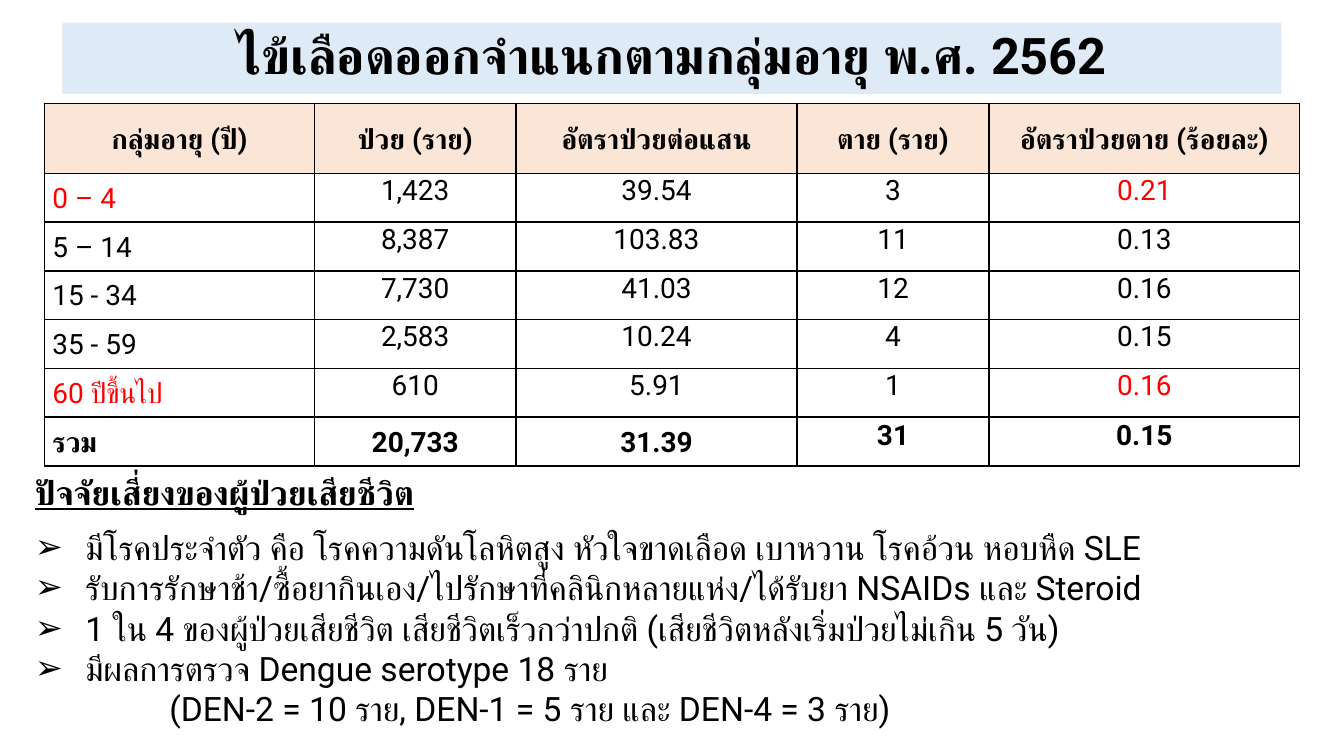
from dataclasses import dataclass

from lxml import etree
from pptx import Presentation
from pptx import util as u
from pptx.dml import color
from pptx.enum import shapes, text
from pptx.oxml import ns


@dataclass(frozen=True)
class Theme:
    font: str = "Roboto"
    ink: str = "000000"
    alert: str = "FF0000"
    title_fill: str = "DEEBF7"
    header_fill: str = "FBE5D6"
    title_size: float = 27
    table_size: float = 15
    body_size: float = 18


theme = Theme()
WIDTH = u.Inches(10)
HEIGHT = WIDTH * 9 // 16
CENTER, LEFT = text.PP_ALIGN.CENTER, text.PP_ALIGN.LEFT
TOP, MIDDLE = text.MSO_ANCHOR.TOP, text.MSO_ANCHOR.MIDDLE


def add_span(para, words, size, bold=False, ink=theme.ink):
    """Add one run, with the same typeface for Latin and Thai letters."""
    span = para.add_run()
    span.text = words
    span.font.name = theme.font
    span.font.size = u.Pt(size)
    span.font.bold = bold
    span.font.color.rgb = color.RGBColor.from_string(ink)
    thai = etree.SubElement(span.font._element, ns.qn("a:cs"))
    thai.set("typeface", theme.font)
    return span


def set_margins(holder, left, top, right, bottom):
    holder.margin_left, holder.margin_top = u.Inches(left), u.Inches(top)
    holder.margin_right, holder.margin_bottom = u.Inches(right), u.Inches(bottom)


deck = Presentation()
deck.slide_width, deck.slide_height = WIDTH, HEIGHT
page = deck.slides.add_slide(deck.slide_layouts[6])

# Title band, centred on the slide
band_width = int(WIDTH * 0.907)
band = page.shapes.add_shape(
    shapes.MSO_SHAPE.RECTANGLE,
    (WIDTH - band_width) // 2, int(HEIGHT * 0.03), band_width, u.Inches(0.53))
band.shadow.inherit = False
band.fill.solid()
band.fill.fore_color.rgb = color.RGBColor.from_string(theme.title_fill)
band.line.fill.background()
frame = band.text_frame
frame.word_wrap = True
frame.vertical_anchor = MIDDLE
set_margins(frame, 0.07, 0.04, 0.07, 0.04)
para = frame.paragraphs[0]
para.alignment = CENTER
para.line_spacing = 0.9
add_span(para, "ไข้เลือดออกจำแนกตามกลุ่มอายุ พ.ศ. 2562", theme.title_size, bold=True)

# Cases and deaths by age group
rows = [
    ["กลุ่มอายุ (ปี)", "ป่วย (ราย)", "อัตราป่วยต่อแสน", "ตาย (ราย)", "อัตราป่วยตาย (ร้อยละ)"],
    ["0 – 4", "1,423", "39.54", "3", "0.21"],
    ["5 – 14", "8,387", "103.83", "11", "0.13"],
    ["15 - 34", "7,730", "41.03", "12", "0.16"],
    ["35 - 59", "2,583", "10.24", "4", "0.15"],
    ["60 ปีขึ้นไป", "610", "5.91", "1", "0.16"],
    ["รวม", "20,733", "31.39", "31", "0.15"],
]
column_widths = [2.01, 1.5, 2.09, 1.43, 2.31]
table_height, header_height = 2.7, 0.52
body_height = (table_height - header_height) / (len(rows) - 1)
row_heights = [header_height] + [body_height] * (len(rows) - 1)
total_row = len(rows) - 1
alert_rows = (1, 5)

table_width = u.Inches(sum(column_widths))
table = page.shapes.add_table(
    len(rows), len(column_widths), (WIDTH - table_width) // 2, u.Inches(0.77),
    table_width, u.Inches(table_height)).table
table.horz_banding = False
for column, width in zip(table.columns, column_widths):
    column.width = u.Inches(width)
for row, height in zip(table.rows, row_heights):
    row.height = u.Inches(height)

for r, values in enumerate(rows):
    for c, value in enumerate(values):
        cell = table.cell(r, c)
        cell_format = cell._tc.get_or_add_tcPr()
        for side in ("lnL", "lnR", "lnT", "lnB"):
            edge = etree.SubElement(cell_format, ns.qn(f"a:{side}"), w=str(u.Pt(1)))
            paint = etree.SubElement(edge, ns.qn("a:solidFill"))
            etree.SubElement(paint, ns.qn("a:srgbClr"), val=theme.ink)
        if r == 0:
            cell.fill.solid()
            cell.fill.fore_color.rgb = color.RGBColor.from_string(theme.header_fill)
        else:
            cell.fill.background()

        strong = r in (0, total_row)
        label = strong or c == 0
        top_aligned = not label or (r == total_row and c >= 3)
        cell.vertical_anchor = TOP if top_aligned else MIDDLE
        set_margins(cell, *((0.06, 0, 0.06, 0) if label else (0.01, 0.01, 0.01, 0)))

        para = cell.text_frame.paragraphs[0]
        para.alignment = LEFT if c == 0 and r > 0 else CENTER
        if label:
            para.line_spacing = 1.07
        alert = r in alert_rows and c in (0, len(values) - 1)
        add_span(para, value, theme.table_size, strong, theme.alert if alert else theme.ink)

# Risk factors
box = page.shapes.add_textbox(
    int(WIDTH * 0.019), u.Inches(3.47), int(WIDTH * 0.962), u.Inches(2.28))
frame = box.text_frame
frame.word_wrap = True
frame.auto_size = text.MSO_AUTO_SIZE.SHAPE_TO_FIT_TEXT
set_margins(frame, 0.07, 0.04, 0.07, 0.04)
para = frame.paragraphs[0]
heading = add_span(para, "ปัจจัยเสี่ยงของผู้ป่วยเสียชีวิต", theme.body_size, bold=True)
heading.font.underline = True
para.space_after = u.Pt(8)

risk_factors = [
    "มีโรคประจำตัว คือ โรคความดันโลหิตสูง หัวใจขาดเลือด เบาหวาน โรคอ้วน หอบหืด SLE",
    "รับการรักษาช้า/ซื้อยากินเอง/ไปรักษาที่คลินิกหลายแห่ง/ได้รับยา NSAIDs และ Steroid",
    "1 ใน 4 ของผู้ป่วยเสียชีวิต เสียชีวิตเร็วกว่าปกติ (เสียชีวิตหลังเริ่มป่วยไม่เกิน 5 วัน)",
    "มีผลการตรวจ Dengue serotype 18 ราย",
]
hanging = u.Pt(27)
for factor in risk_factors:
    para = frame.add_paragraph()
    add_span(para, factor, theme.body_size)
    layout = para._p.get_or_add_pPr()
    layout.set("marL", str(hanging))
    layout.set("indent", str(-hanging))
    etree.SubElement(layout, ns.qn("a:buFont"), typeface=theme.font)
    etree.SubElement(layout, ns.qn("a:buChar"), char="➢")

para = frame.add_paragraph()
add_span(para, "(DEN-2 = 10 ราย, DEN-1 = 5 ราย และ DEN-4 = 3 ราย)", theme.body_size)
para._p.get_or_add_pPr().set("marL", str(u.Inches(1)))

deck.save("out.pptx")
